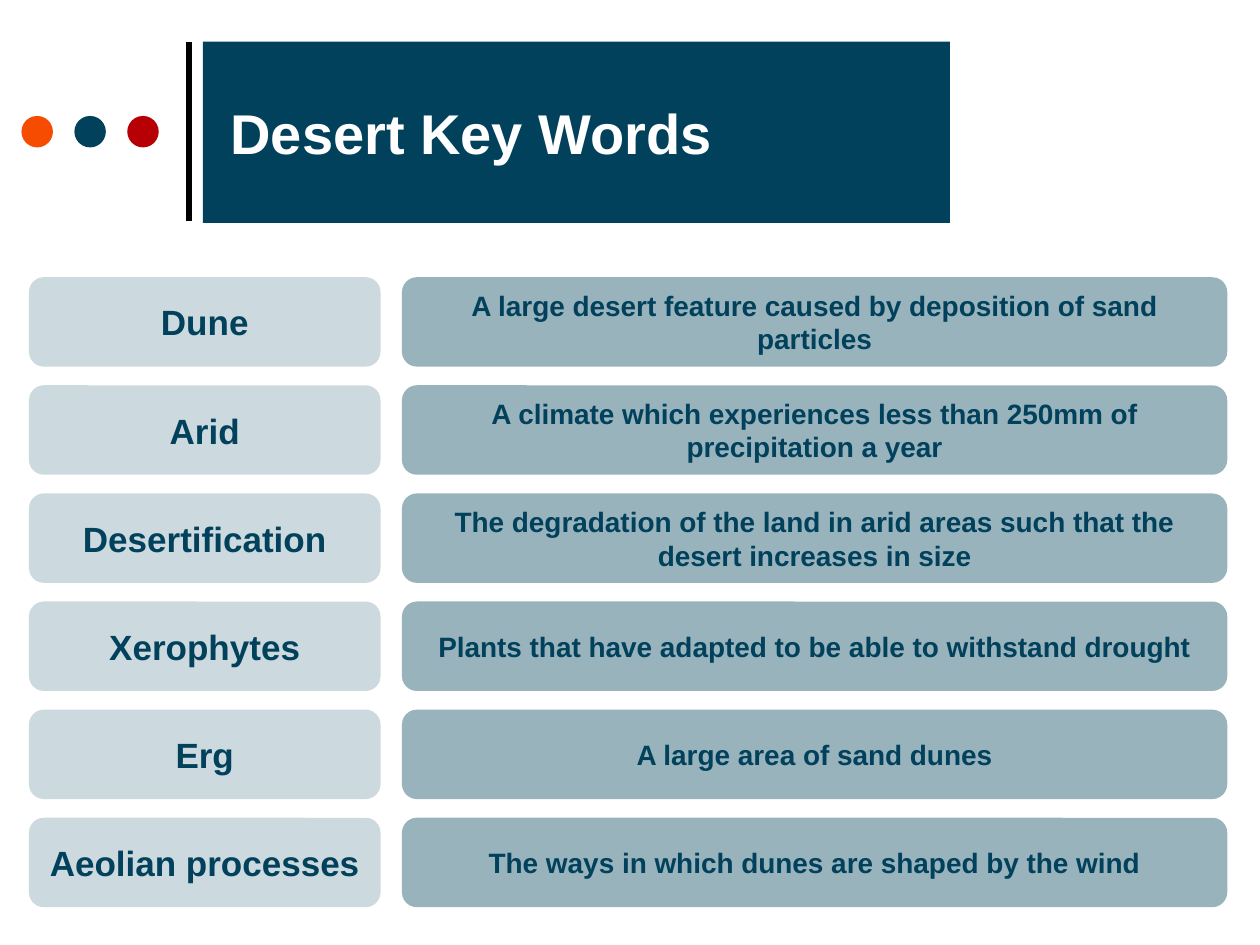
from lxml.etree import SubElement
from pptx import Presentation
from pptx.dml.color import RGBColor as Rgb
from pptx.enum.shapes import MSO_CONNECTOR as Wire, MSO_SHAPE as Kind
from pptx.enum.text import MSO_ANCHOR as Anchor, PP_ALIGN as Align
from pptx.oxml.ns import qn
from pptx.util import Inches, Pt

HUES = {"navy": "01415B", "orange": "F54C00", "red": "B70005", "black": "000000",
        "white": "FFFFFF", "pale": "CCD9DE", "slate": "99B3BD"}
WORDS = [
    ("Dune", "A large desert feature caused by deposition of sand particles"),
    ("Arid", "A climate which experiences less than 250mm of precipitation a year"),
    ("Desertification",
     "The degradation of the land in arid areas such that the desert increases in size"),
    ("Xerophytes", "Plants that have adapted to be able to withstand drought"),
    ("Erg", "A large area of sand dunes"),
    ("Aeolian processes", "The ways in which dunes are shaped by the wind"),
]

deck = Presentation()
deck.slide_width, deck.slide_height = Inches(10), Inches(7.5)
slide = deck.slides.add_slide(deck.slide_layouts[6])


def hue(name):
    return Rgb.from_string(HUES[name])


def put(text, *, kind, at, fill, size=16, ink="navy", align=Align.CENTER, inset=0.1):
    shape = slide.shapes.add_shape(kind, *[Inches(n) for n in at])
    shape.shadow.inherit = False
    shape.fill.solid()
    shape.fill.fore_color.rgb = hue(fill)
    shape.line.fill.background()
    if text:
        frame = shape.text_frame
        frame.word_wrap = True
        frame.vertical_anchor = Anchor.MIDDLE
        frame.margin_left = Inches(inset)
        line = frame.paragraphs[0]
        line.alignment = align
        run = line.add_run()
        run.text = text
        font = run.font
        font.name, font.size, font.bold = "Arial", Pt(size), True
        font.color.rgb = hue(ink)


rule = slide.shapes.add_connector(
    Wire.STRAIGHT, Inches(1.5), Inches(1.75), Inches(1.5), Inches(0.33))
rule.line.color.rgb = hue("black")
rule.line.width = Pt(3)
SubElement(rule._element.spPr, qn("a:effectLst"))

for col, name in enumerate(("orange", "navy", "red")):
    put("", kind=Kind.OVAL, at=(0.17 + col * 0.42, 0.92, 0.25, 0.25), fill=name)

put("Desert Key Words", kind=Kind.RECTANGLE, at=(1.61, 0.33, 5.93, 1.44),
    fill="navy", size=32, ink="white", align=Align.LEFT, inset=0.22)

COLS = [(0.23, 2.79, "pale", 20), (3.19, 6.55, "slate", 16)]
TOP, STEP, HIGH = 2.2, 0.858, 0.71
for row, pair in enumerate(WORDS):
    for text, (left, wide, fill, size) in zip(pair, COLS):
        put(text, kind=Kind.ROUNDED_RECTANGLE,
            at=(left, TOP + row * STEP, wide, HIGH), fill=fill, size=size)

deck.save("out.pptx")
